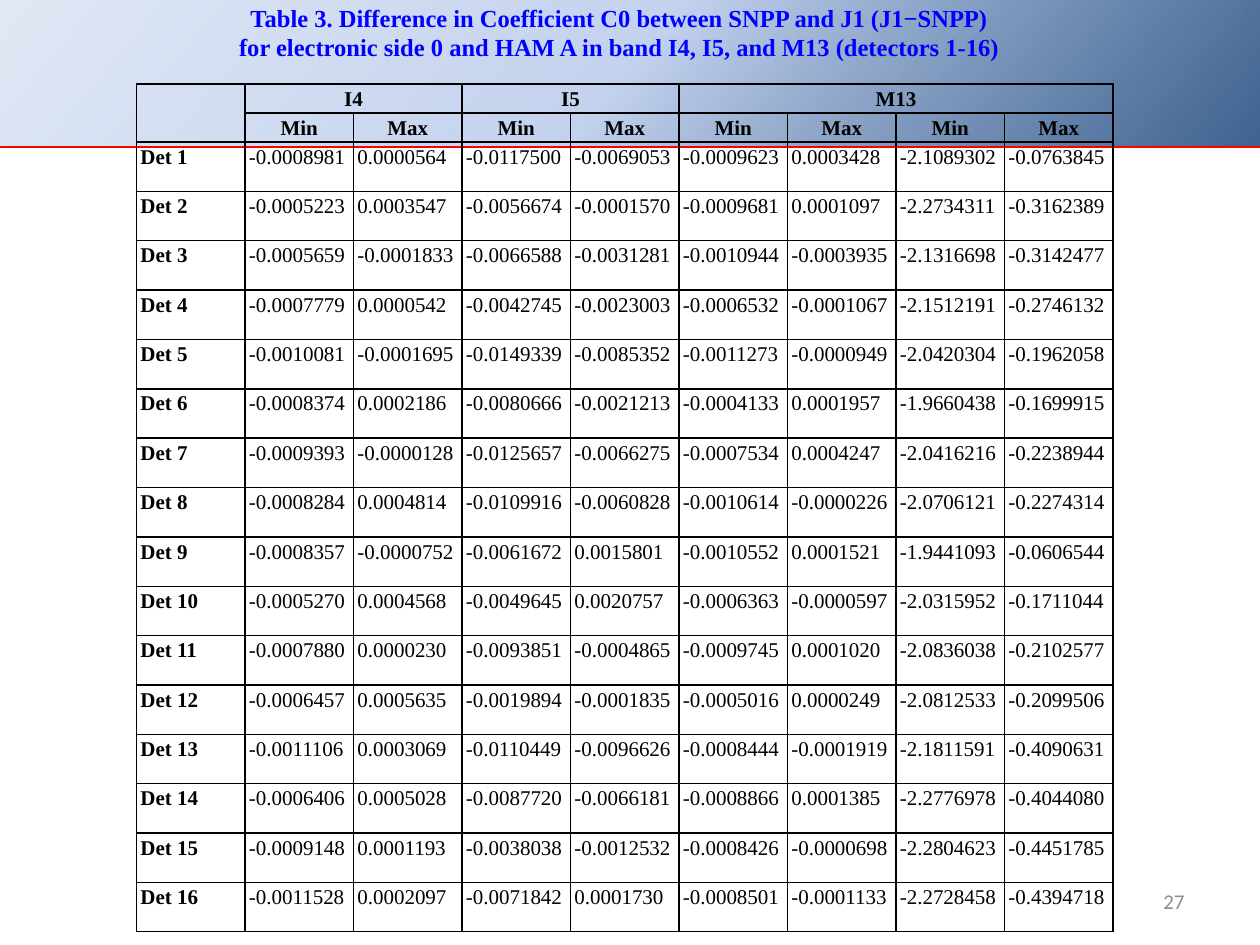
import dataclasses

import pptx
import pptx.util
import pptx.dml.color
import pptx.enum.shapes
import pptx.enum.text
import pptx.oxml
import pptx.oxml.ns

Pt = pptx.util.Pt
Align = pptx.enum.text.PP_ALIGN
Anchor = pptx.enum.text.MSO_ANCHOR
NS = 'xmlns:a="http://schemas.openxmlformats.org/drawingml/2006/main"'


@dataclasses.dataclass(frozen=True)
class Theme:
    serif: str = "Times New Roman"
    sans: str = "Calibri"
    ink: str = "000000"
    blue: str = "0000FF"
    red: str = "FF0000"
    gray: str = "8C8C8C"
    dark: str = "1F497D"
    mid: str = "C2D1ED"
    pale: str = "E1E8F5"
    head: int = 14
    body: int = 12


THEME = Theme()

TITLE = ("Table 3. Difference in Coefficient C0 between SNPP and J1 (J1−SNPP)\n"
         "for electronic side 0 and HAM A in band I4, I5, and M13 (detectors 1-16)")
BANDS = (("I4", 2), ("I5", 2), ("M13", 4))
DATA = (
    "-0.0008981 0.0000564 -0.0117500 -0.0069053 -0.0009623 0.0003428 -2.1089302 -0.0763845",
    "-0.0005223 0.0003547 -0.0056674 -0.0001570 -0.0009681 0.0001097 -2.2734311 -0.3162389",
    "-0.0005659 -0.0001833 -0.0066588 -0.0031281 -0.0010944 -0.0003935 -2.1316698 -0.3142477",
    "-0.0007779 0.0000542 -0.0042745 -0.0023003 -0.0006532 -0.0001067 -2.1512191 -0.2746132",
    "-0.0010081 -0.0001695 -0.0149339 -0.0085352 -0.0011273 -0.0000949 -2.0420304 -0.1962058",
    "-0.0008374 0.0002186 -0.0080666 -0.0021213 -0.0004133 0.0001957 -1.9660438 -0.1699915",
    "-0.0009393 -0.0000128 -0.0125657 -0.0066275 -0.0007534 0.0004247 -2.0416216 -0.2238944",
    "-0.0008284 0.0004814 -0.0109916 -0.0060828 -0.0010614 -0.0000226 -2.0706121 -0.2274314",
    "-0.0008357 -0.0000752 -0.0061672 0.0015801 -0.0010552 0.0001521 -1.9441093 -0.0606544",
    "-0.0005270 0.0004568 -0.0049645 0.0020757 -0.0006363 -0.0000597 -2.0315952 -0.1711044",
    "-0.0007880 0.0000230 -0.0093851 -0.0004865 -0.0009745 0.0001020 -2.0836038 -0.2102577",
    "-0.0006457 0.0005635 -0.0019894 -0.0001835 -0.0005016 0.0000249 -2.0812533 -0.2099506",
    "-0.0011106 0.0003069 -0.0110449 -0.0096626 -0.0008444 -0.0001919 -2.1811591 -0.4090631",
    "-0.0006406 0.0005028 -0.0087720 -0.0066181 -0.0008866 0.0001385 -2.2776978 -0.4044080",
    "-0.0009148 0.0001193 -0.0038038 -0.0012532 -0.0008426 -0.0000698 -2.2804623 -0.4451785",
    "-0.0011528 0.0002097 -0.0071842 0.0001730 -0.0008501 -0.0001133 -2.2728458 -0.4394718",
)


def rgb(code):
    return pptx.dml.color.RGBColor.from_string(code)


def style(frame, face, size, tint, bold, align):
    for para in frame.paragraphs:
        para.alignment = align
        for run in para.runs:
            font = run.font
            font.name, font.size, font.bold = face, Pt(size), bold
            font.color.rgb = rgb(tint)


def add_band(slide, box):
    left, top, width, height = box
    rect = slide.shapes.add_shape(pptx.enum.shapes.MSO_SHAPE.RECTANGLE,
                                  *map(Pt, box))
    rect.shadow.inherit = False
    rect.line.fill.background()
    rect.fill.gradient()
    grad = rect.element.spPr.find(pptx.oxml.ns.qn("a:gradFill"))
    grad.getparent().replace(grad, pptx.oxml.parse_xml(
        f'<a:gradFill {NS} rotWithShape="1"><a:gsLst>'
        f'<a:gs pos="0"><a:srgbClr val="{THEME.dark}"><a:alpha val="85000"/>'
        f'</a:srgbClr></a:gs>'
        f'<a:gs pos="50000"><a:srgbClr val="{THEME.mid}"/></a:gs>'
        f'<a:gs pos="100000"><a:srgbClr val="{THEME.pale}"/></a:gs>'
        f'</a:gsLst><a:lin ang="13200000" scaled="0"/></a:gradFill>'))

    base = top + height
    rule = slide.shapes.add_connector(
        pptx.enum.shapes.MSO_CONNECTOR.STRAIGHT,
        Pt(left), Pt(base), Pt(left + width), Pt(base))
    rule.line.color.rgb = rgb(THEME.red)
    rule.line.width = Pt(1.5)
    rule.element.spPr.append(pptx.oxml.parse_xml(f"<a:effectLst {NS}/>"))


def add_title(slide, box):
    title = slide.shapes.title
    title.left, title.top, title.width, title.height = map(Pt, box)
    frame = title.text_frame
    frame.text = TITLE
    frame.word_wrap = False
    frame.auto_size = pptx.enum.text.MSO_AUTO_SIZE.NONE
    frame.vertical_anchor = Anchor.MIDDLE
    style(frame, THEME.serif, THEME.head, THEME.blue, True, Align.CENTER)
    title.element.getparent().append(title.element)


def add_page(slide, box):
    frame = slide.shapes.add_textbox(*map(Pt, box)).text_frame
    frame.text = "27"
    frame.word_wrap = True
    frame.vertical_anchor = Anchor.MIDDLE
    style(frame, THEME.sans, THEME.body, THEME.gray, False, Align.RIGHT)


def dress(cell, bold, align):
    cell.margin_left = cell.margin_right = Pt(2.25)
    cell.margin_top = cell.margin_bottom = 0
    props = cell._tc.get_or_add_tcPr()
    for side in "LRTB":
        props.append(pptx.oxml.parse_xml(
            f'<a:ln{side} {NS} w="{Pt(1)}"><a:solidFill>'
            f'<a:srgbClr val="{THEME.ink}"/></a:solidFill></a:ln{side}>'))
    cell.fill.background()
    para = cell.text_frame.paragraphs[0]
    para.line_spacing = 1.15
    para._p.get_or_add_endParaRPr().set("sz", str(THEME.body * 100))
    style(cell.text_frame, THEME.serif, THEME.body, THEME.ink, bold, align)


def add_grid(slide, box):
    data = [line.split() for line in DATA]
    top = [""]
    for name, span in BANDS:
        top += [name] + [""] * (span - 1)
    rows = [top, [""] + ["Min", "Max"] * 4]
    rows += [[f"Det {n}"] + vals for n, vals in enumerate(data, 1)]

    grid = slide.shapes.add_table(len(rows), len(top), *map(Pt, box)).table
    grid.first_row = grid.horz_banding = False
    for col in grid.columns:
        col.width = Pt(box[2] / len(top))
    lead = 16.5
    step = (box[3] - 2 * lead) / len(data)
    for r, vals in enumerate(rows):
        grid.rows[r].height = Pt(lead if r < 2 else step)
        for c, text in enumerate(vals):
            cell = grid.cell(r, c)
            cell.text = text
            dress(cell, r < 2 or c == 0, Align.CENTER if r < 2 else Align.LEFT)

    grid.cell(0, 0).merge(grid.cell(1, 0))
    col = 1
    for name, span in BANDS:
        grid.cell(0, col).merge(grid.cell(0, col + span - 1))
        col += span


def main():
    deck = pptx.Presentation()
    deck.slide_width, deck.slide_height = Pt(720), Pt(540)
    slide = deck.slides.add_slide(deck.slide_layouts[5])
    add_band(slide, (0, 0, 720, 84))
    add_page(slide, (516, 500.5, 168, 28.75))
    add_grid(slide, (78, 48, 558, 484.5))
    add_title(slide, (126, -2, 456, 41))
    deck.save("out.pptx")


if __name__ == "__main__":
    main()
